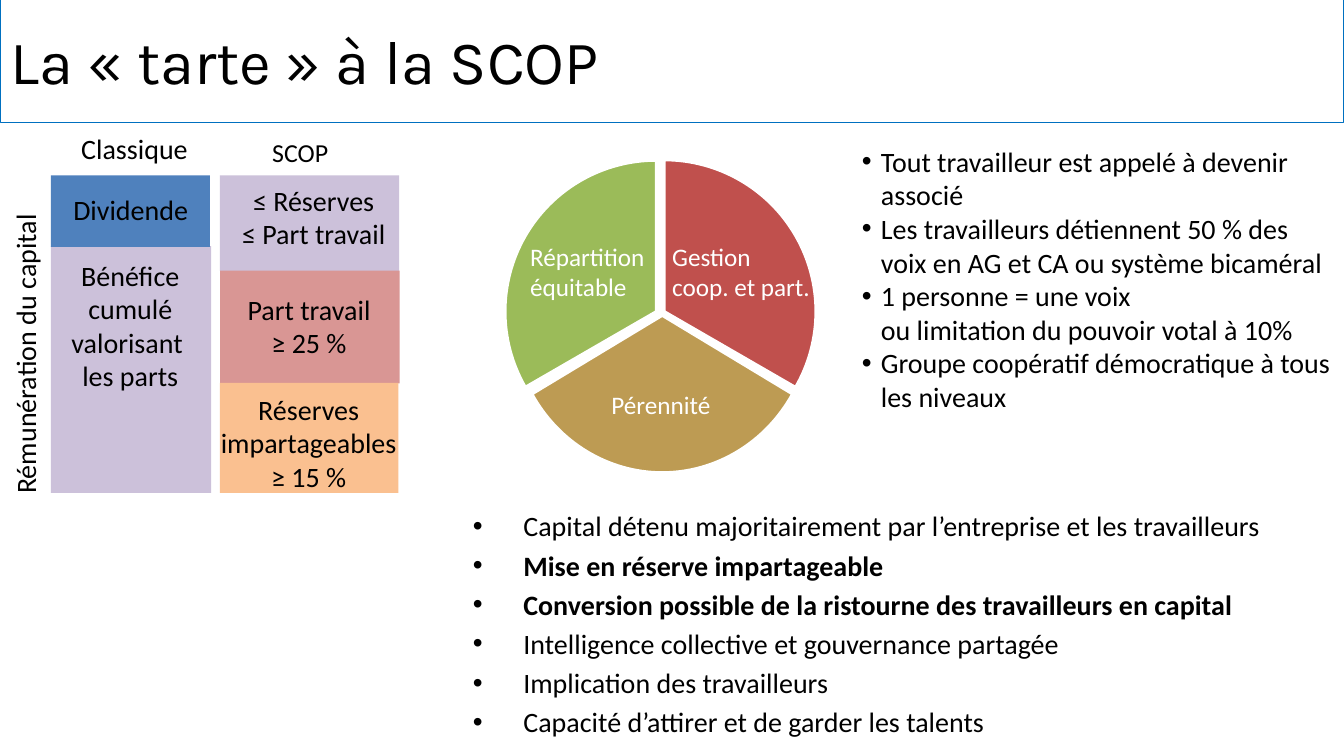
from math import cos, radians, sin, tan

from lxml import etree
from pptx import Presentation
from pptx.dml.color import RGBColor
from pptx.enum.shapes import MSO_SHAPE
from pptx.enum.text import MSO_ANCHOR, PP_ALIGN
from pptx.oxml.ns import qn
from pptx.util import Cm, Pt

RECTANGLE = MSO_SHAPE.RECTANGLE
MIDDLE = MSO_ANCHOR.MIDDLE
LEFT, CENTER = PP_ALIGN.LEFT, PP_ALIGN.CENTER

BLACK = RGBColor(0x00, 0x00, 0x00)
WHITE = RGBColor(0xFF, 0xFF, 0xFF)
TITLE_BLUE = RGBColor(0x00, 0x70, 0xC0)
BLUE = RGBColor(0x4F, 0x81, 0xBD)
LILAC = RGBColor(0xCC, 0xC1, 0xDA)
PINK = RGBColor(0xD9, 0x96, 0x94)
ORANGE = RGBColor(0xFA, 0xC0, 0x90)
RED = RGBColor(0xC0, 0x50, 0x4D)
OCHRE = RGBColor(0xBD, 0x9B, 0x53)
GREEN = RGBColor(0x9B, 0xBB, 0x59)

# left, top, width, height in centimetres
CAPITAL_BLOCKS = [
    (1.28, 6.2, 4.04, 6.22, LILAC),
    (1.28, 4.42, 4.01, 1.8, BLUE),
    (5.54, 4.42, 4.52, 2.41, LILAC),
    (5.55, 6.82, 4.52, 2.84, PINK),
    (5.54, 9.65, 4.5, 2.77, ORANGE),
]
BLOCK_LABELS = [
    ("Dividende", (1.58, 4.72, 3.43, 1.12)),
    ("Bénéfice\ncumulé\nvalorisant \nles parts", (1.53, 6.38, 3.51, 3.68)),
    ("≤ Réserves\n≤ Part travail", (5.82, 4.49, 4.17, 1.96)),
    ("Part travail\n≥ 25 %", (5.96, 7.24, 3.66, 1.96)),
    ("Réserves\nimpartageables\n≥ 15 %", (5.28, 9.76, 5, 2.82)),
]
# tip x, tip y, horizontal radius, vertical radius, start angle, colour
PIE_SECTORS = [
    (16.74, 7.85, 3.82, 3.82, -90, RED),
    (16.69, 7.95, 3.79, 3.96, 30, OCHRE),
    (16.54, 7.85, 3.81, 3.81, 150, GREEN),
]
HALF_SECTOR = 60
SECTOR_LABELS = [
    (["Gestion", "coop. et part."], (16.69, 5.96, 4.39, 1.8), True),
    (["Répartition équitable"], (13.11, 5.96, 3.58, 1.8), True),
    (["Pérennité"], (15.16, 9.68, 3.18, 1.02), False),
]
GOVERNANCE_POINTS = [
    "Tout travailleur est appelé à devenir associé",
    "Les travailleurs détiennent 50 % des voix en AG et CA ou système bicaméral",
    "1 personne = une voix \nou limitation du pouvoir votal à 10%",
    "Groupe coopératif démocratique à tous les niveaux",
]
CAPITAL_POINTS = [
    "Capital détenu majoritairement par l’entreprise et les travailleurs",
    "Mise en réserve impartageable",
    "Conversion possible de la ristourne des travailleurs en capital",
    "Intelligence collective et gouvernance partagée",
    "Implication des travailleurs",
    "Capacité d’attirer et de garder les talents",
]
BOLD_POINTS = CAPITAL_POINTS[1:3]


def format_runs(paragraph, size, color=BLACK, font="Calibri", bold=False):
    for run in paragraph.runs:
        run.font.name = font
        run.font.size = Pt(size)
        run.font.color.rgb = color
        run.font.bold = bold


def add_block(slide, left, top, width, height, color=None):
    shape = slide.shapes.add_shape(RECTANGLE, Cm(left), Cm(top), Cm(width), Cm(height))
    shape.shadow.inherit = False
    shape.line.fill.background()
    if color is None:
        shape.fill.background()
    else:
        shape.fill.solid()
        shape.fill.fore_color.rgb = color
    return shape


def add_title(slide, text):
    shape = add_block(slide, 0.01, -0.08, 33.85, 3.18)
    shape.line.color.rgb = TITLE_BLUE
    shape.line.width = Pt(0.75)
    shape.text_frame.vertical_anchor = MIDDLE
    paragraph = shape.text_frame.paragraphs[0]
    paragraph.text = text
    paragraph.alignment = LEFT
    format_runs(paragraph, 44, font="Karla")


def add_text(slide, paragraphs, box, size=20, color=BLACK, align=CENTER, wrap=False):
    """Add one paragraph per string; a newline inside a string is a line break."""
    shape = slide.shapes.add_textbox(*(Cm(length) for length in box))
    frame = shape.text_frame
    frame.word_wrap = wrap
    for index, text in enumerate(paragraphs):
        paragraph = frame.add_paragraph() if index else frame.paragraphs[0]
        paragraph.text = text
        paragraph.alignment = align
        format_runs(paragraph, size, color)
    return shape


def add_heading(slide, text, box, size, align):
    frame = add_text(slide, [text], box, size, align=align, wrap=True).text_frame
    frame.vertical_anchor = MIDDLE
    frame.paragraphs[0].line_spacing = 0.9


def add_bullets(slide, points, box, indent, gap=0):
    shape = add_text(slide, points, box, align=LEFT, wrap=True)
    for index, paragraph in enumerate(shape.text_frame.paragraphs):
        properties = paragraph._p.get_or_add_pPr()
        properties.set("marL", str(Cm(indent)))
        properties.set("indent", str(-Cm(indent)))
        etree.SubElement(properties, qn("a:buFont")).set("typeface", "Arial")
        etree.SubElement(properties, qn("a:buChar")).set("char", "•")
        if index and gap:
            paragraph.space_before = Pt(gap)
        if points[index] in BOLD_POINTS:
            format_runs(paragraph, 20, bold=True)


def add_sector(slide, tip_x, tip_y, radius_x, radius_y, start, color):
    """Draw a third of an ellipse whose arc is made of two Bézier curves."""
    handle = 4 / 3 * tan(radians(HALF_SECTOR / 4))

    def arc_point(degrees, offset=0):
        """Point on the arc, moved along the tangent by a share of the radius."""
        angle = radians(degrees)
        return (Cm(tip_x + radius_x * (cos(angle) - offset * sin(angle))),
                Cm(tip_y + radius_y * (sin(angle) + offset * cos(angle))))

    outline = []
    for begin in (start, start + HALF_SECTOR):
        end = begin + HALF_SECTOR
        outline += [arc_point(begin, handle), arc_point(end, -handle), arc_point(end)]
    outline.append((Cm(tip_x), Cm(tip_y)))
    builder = slide.shapes.build_freeform(*arc_point(start))
    builder.add_line_segments(outline, close=True)
    shape = builder.convert_to_shape()

    lines = list(shape._element.iter(qn("a:lnTo")))
    for first in (0, 3):
        curve = etree.Element(qn("a:cubicBezTo"))
        lines[first].addprevious(curve)
        for line in lines[first:first + 3]:
            curve.append(line[0])
            line.getparent().remove(line)

    shape.shadow.inherit = False
    shape.fill.solid()
    shape.fill.fore_color.rgb = color
    shape.line.color.rgb = WHITE
    shape.line.width = Pt(2)


def main():
    presentation = Presentation()
    presentation.slide_width = Cm(33.87)
    presentation.slide_height = Cm(19.05)
    slide = presentation.slides.add_slide(presentation.slide_layouts[6])

    add_title(slide, "La « tarte » à la SCOP")

    for sector in PIE_SECTORS:
        add_sector(slide, *sector)
    add_bullets(slide, GOVERNANCE_POINTS, (21.47, 3.51, 12.5, 7.09), 0.48)
    add_bullets(slide, CAPITAL_POINTS, (11.67, 12.7, 21.46, 6.25), 1.27, gap=4)
    for paragraphs, box, wrap in SECTOR_LABELS:
        add_text(slide, paragraphs, box, 18, WHITE, LEFT, wrap)

    for block in CAPITAL_BLOCKS:
        add_block(slide, *block)
    for text, box in BLOCK_LABELS:
        add_text(slide, [text], box)
    add_heading(slide, "Classique", (0.33, 3.15, 6.12, 1.27), 20, CENTER)
    add_heading(slide, "SCOP", (6.61, 3.33, 2.01, 1.12), 18.5, LEFT)
    axis_label = add_text(slide, ["Rémunération du capital"], (-3.17, 8.36, 7.62, 1.12))
    axis_label.rotation = 270

    presentation.save("out.pptx")


if __name__ == "__main__":
    main()
